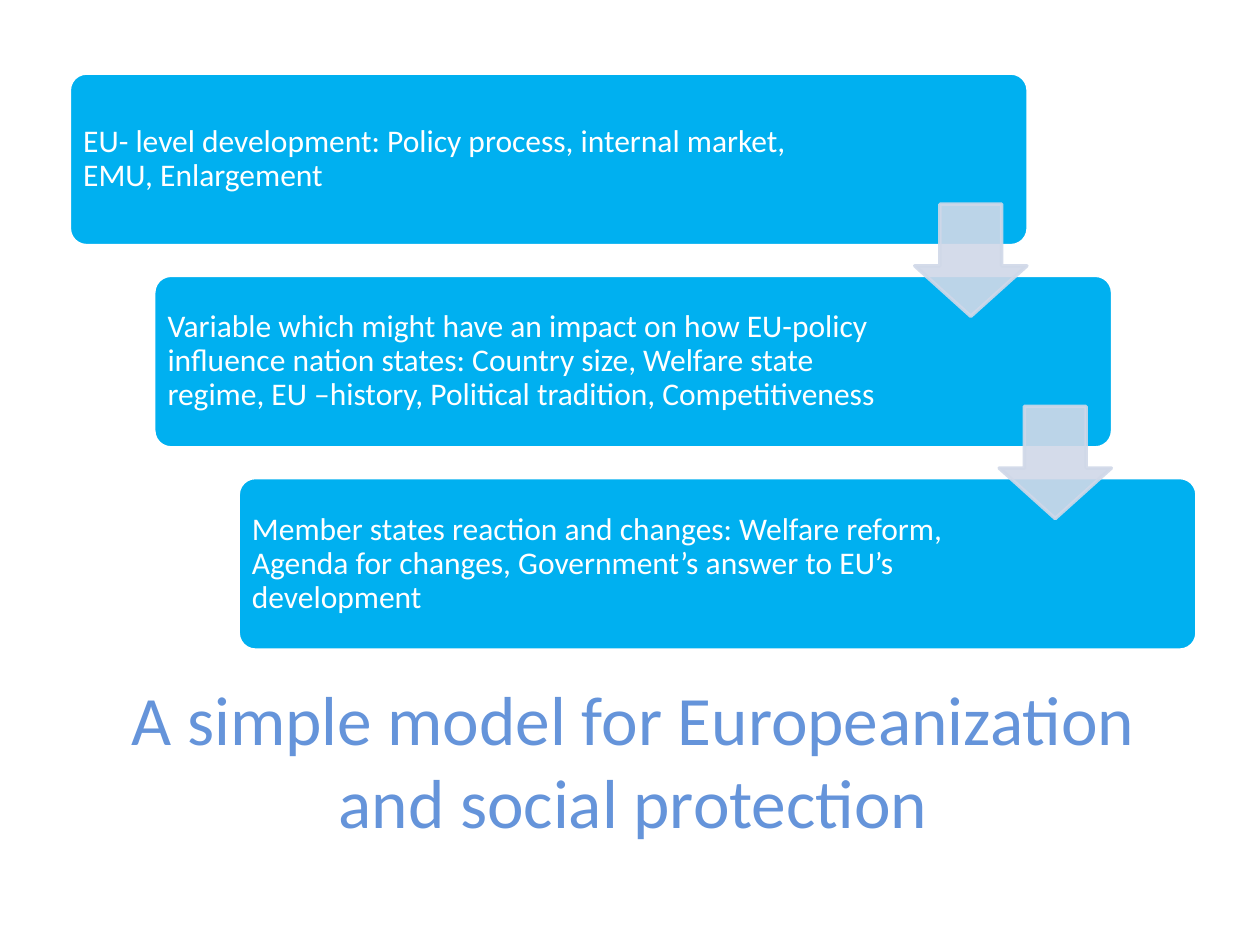
from dataclasses import dataclass

from lxml import etree
from pptx import Presentation
from pptx.dml.color import RGBColor
from pptx.enum.shapes import MSO_SHAPE
from pptx.enum.text import MSO_ANCHOR, PP_ALIGN
from pptx.oxml.ns import qn
from pptx.util import Inches, Pt

ROUND_RECT = MSO_SHAPE.ROUNDED_RECTANGLE
DOWN_ARROW = MSO_SHAPE.DOWN_ARROW
MIDDLE = MSO_ANCHOR.MIDDLE
LEFT, CENTER = PP_ALIGN.LEFT, PP_ALIGN.CENTER

FONT = "Calibri"
COLORS = {"title": "6594DA", "box": "00B0F0", "white": "FFFFFF", "arrow": "D0D8E8"}

# Staircase geometry in inches
BOX_X, BOX_Y, BOX_W, BOX_H = 0.55, 0.58, 7.61, 1.37
STEP_X, STEP_Y = 0.67, 3.21 / 2
ARROW_X, ARROW_Y, ARROW_SIZE = 7.26, 1.62, 0.89
MARGIN = 0.04


@dataclass
class Stage:
    text: str
    text_width: float


STAGES = [
    Stage("EU- level development: Policy process, internal market, EMU, Enlargement", 6.12),
    Stage("Variable which might have an impact on how EU-policy influence nation states: "
          "Country size, Welfare state regime, EU –history, Political tradition, "
          "Competitiveness", 5.96),
    Stage("Member states reaction and changes: Welfare reform, Agenda for changes, "
          "Government’s answer to EU’s development", 5.96),
]


def rgb(name: str) -> RGBColor:
    return RGBColor.from_string(COLORS[name])


def add_block(s, kind, x: float, y: float, w: float, h: float,
              fill: str, line: str, adjustments: list[float]):
    sp = s.shapes.add_shape(kind, Inches(x), Inches(y), Inches(w), Inches(h))
    sp.shadow.inherit = False
    sp.fill.solid()
    sp.fill.fore_color.rgb = rgb(fill)
    sp.line.color.rgb = rgb(line)
    sp.line.width = Pt(2)
    for i, value in enumerate(adjustments):
        sp.adjustments[i] = value
    return sp


def add_text(s, text: str, x: float, y: float, w: float, h: float,
             size: float, color: str, align):
    sp = s.shapes.add_textbox(Inches(x), Inches(y), Inches(w), Inches(h))
    tf = sp.text_frame
    tf.word_wrap = True
    tf.vertical_anchor = MIDDLE
    p = tf.paragraphs[0]
    p.text = text
    p.alignment = align
    p.font.name = FONT
    p.font.size = Pt(size)
    p.font.color.rgb = rgb(color)
    return tf


def add_stage(s, stage: Stage, x: float, y: float) -> None:
    add_block(s, ROUND_RECT, x, y, BOX_W, BOX_H, "box", "white", [0.1])
    tf = add_text(s, stage.text, x + MARGIN, y + MARGIN, stage.text_width,
                  BOX_H - 2 * MARGIN, 18, "white", LEFT)
    tf.margin_left = tf.margin_right = tf.margin_top = tf.margin_bottom = Inches(0.07)
    tf.paragraphs[0].line_spacing = 0.9


def add_arrow(s, x: float, y: float) -> None:
    sp = add_block(s, DOWN_ARROW, x, y, ARROW_SIZE, ARROW_SIZE,
                   "arrow", "arrow", [0.55, 0.45])
    # 90% opacity on both fill and line
    for color in sp.element.spPr.iter(qn("a:srgbClr")):
        etree.SubElement(color, qn("a:alpha"), val="90000")


def main() -> None:
    prs = Presentation()
    prs.slide_width, prs.slide_height = Inches(10), Inches(7.5)
    s = prs.slides.add_slide(prs.slide_layouts[6])

    # Title
    add_text(s, "A simple model for Europeanization and social protection",
             0.55, 5.45, 8.95, 1.15, 39.6, "title", CENTER)

    # Stages, stepping down to the right
    for i, stage in enumerate(STAGES):
        add_stage(s, stage, BOX_X + i * STEP_X, BOX_Y + i * STEP_Y)

    # Arrows between consecutive stages
    for i in range(len(STAGES) - 1):
        add_arrow(s, ARROW_X + i * STEP_X, ARROW_Y + i * STEP_Y)

    prs.save("out.pptx")


if __name__ == "__main__":
    main()
